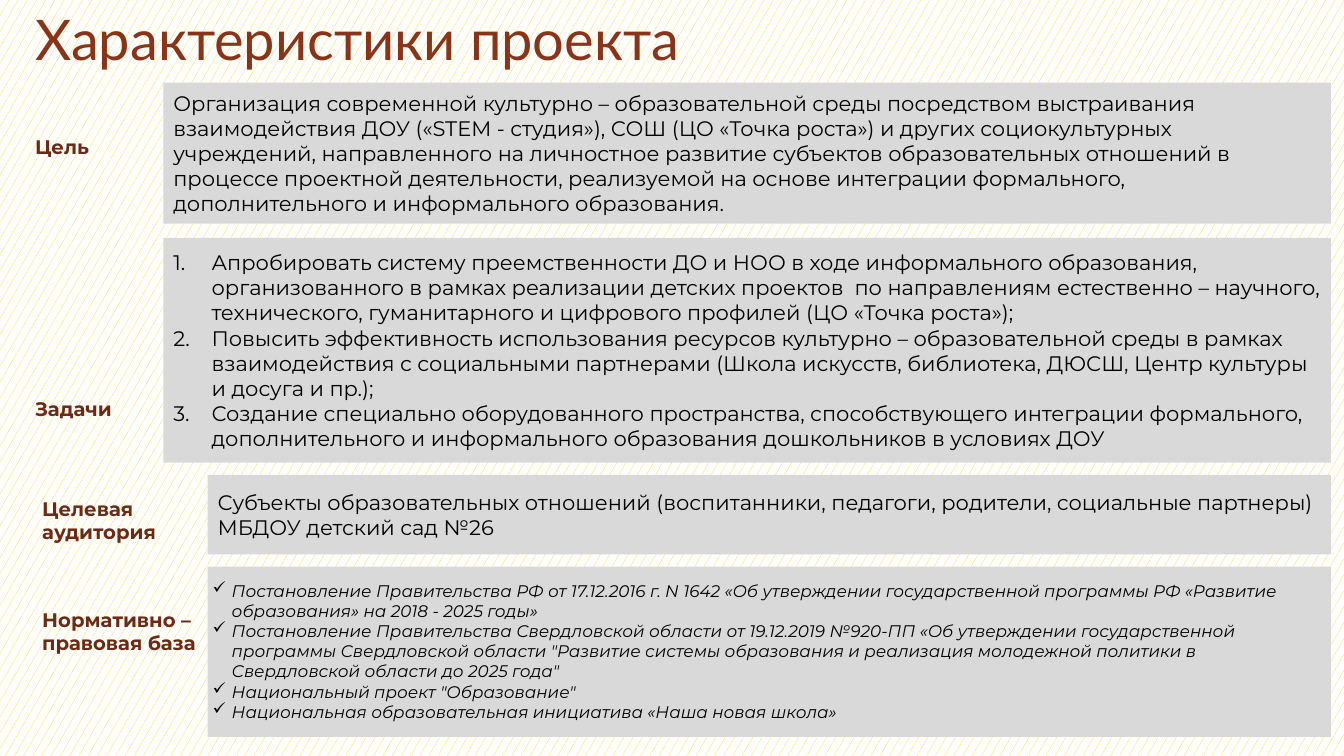
from lxml import etree
from pptx import Presentation
from pptx.dml.color import RGBColor
from pptx.enum.dml import MSO_PATTERN
from pptx.enum.shapes import MSO_SHAPE
from pptx.enum.text import MSO_ANCHOR, MSO_AUTO_SIZE, PP_ALIGN
from pptx.oxml.ns import qn
from pptx.util import Inches, Pt

TITLE = "Характеристики проекта"
GOAL = [
    "Организация современной культурно – образовательной среды посредством выстраивания "
    "взаимодействия ДОУ («STEM - студия»), СОШ (ЦО «Точка роста») и других социокультурных "
    "учреждений, направленного на личностное развитие субъектов образовательных отношений "
    "в процессе проектной деятельности, реализуемой на основе интеграции формального,  "
    "дополнительного и информального образования.",
]
TASKS = [
    "Апробировать систему преемственности ДО и НОО в ходе информального образования, "
    "организованного в рамках реализации детских проектов  по направлениям естественно – "
    "научного, технического, гуманитарного и цифрового профилей (ЦО «Точка роста»);",
    "Повысить эффективность использования ресурсов культурно – образовательной среды в рамках "
    "взаимодействия с социальными партнерами (Школа искусств, библиотека, ДЮСШ, Центр культуры "
    "и досуга и пр.);",
    "Создание специально оборудованного пространства, способствующего интеграции формального, "
    "дополнительного и информального образования дошкольников в условиях ДОУ",
]
AUDIENCE = [
    "Субъекты образовательных отношений (воспитанники, педагоги, родители, социальные партнеры) "
    "МБДОУ детский сад №26",
]
LEGAL_BASE = [
    "Постановление Правительства РФ от 17.12.2016 г. N 1642 «Об утверждении государственной "
    "программы РФ «Развитие образования» на 2018 - 2025 годы»",
    "Постановление Правительства Свердловской области от 19.12.2019 №920-ПП «Об утверждении "
    "государственной программы Свердловской области \"Развитие системы образования и реализация "
    "молодежной политики в Свердловской области до 2025 года\"",
    "Национальный проект \"Образование\"",
    "Национальная образовательная инициатива «Наша новая школа»",
]
SECTIONS = [
    ("Цель", (0.25, 1.29, 1.54, 0.68), GOAL, (1.62, 0.82, 1.4), None),
    ("Задачи", (0.25, 3.89, 1.54, 1.39), TASKS, (1.62, 2.36, 2.23), "number"),
    ("Целевая аудитория", (0.32, 4.88, 1.51, 0.49), AUDIENCE, (2.06, 4.71, 0.79), None),
    ("Нормативно – правовая база", (0.32, 5.98, 1.74, 1.23), [], (2.06, 5.62, 1.69), None),
]
LEGAL_BOX = (2.01, 5.71, 10.85, 1.51)
PANEL_RIGHT = 13.2

HEADING = RGBColor(0x89, 0x34, 0x19)
LABEL = RGBColor(0x6C, 0x29, 0x14)
PANEL = RGBColor(0xD9, 0xD9, 0xD9)
BLACK = RGBColor(0, 0, 0)
WHITE = RGBColor(255, 255, 255)
YELLOW = RGBColor(0xFF, 0xCA, 0x08)
BULLETS = {
    "number": (0.38, "a:buAutoNum", {"type": "arabicPeriod"}),
    "check": (0.19, "a:buChar", {"char": "✓"}),
}


def add_bullet(paragraph, style):
    indent, tag, attributes = BULLETS[style]
    properties = paragraph._p.get_or_add_pPr()
    properties.set("marL", str(Inches(indent)))
    properties.set("indent", str(-Inches(indent)))
    etree.SubElement(properties, qn(tag), attributes)


def write(frame, texts, size, color, bullet=None, bold=False, italic=False, after=0):
    frame.word_wrap = True
    for index, text in enumerate(texts):
        paragraph = frame.paragraphs[0] if index == 0 else frame.add_paragraph()
        paragraph.text = text
        paragraph.alignment = PP_ALIGN.LEFT
        paragraph.space_after = Pt(after)
        if bullet:
            add_bullet(paragraph, bullet)
        for run in paragraph.runs:
            run.font.name = "Montserrat"
            run.font.size = Pt(size)
            run.font.bold = bold
            run.font.italic = italic
            run.font.color.rgb = color


def add_panel(slide, left, top, height):
    panel = slide.shapes.add_shape(
        MSO_SHAPE.RECTANGLE, Inches(left), Inches(top), Inches(PANEL_RIGHT - left), Inches(height))
    panel.shadow.inherit = False
    panel.fill.solid()
    panel.fill.fore_color.rgb = PANEL
    panel.line.fill.background()
    panel.text_frame.vertical_anchor = MSO_ANCHOR.MIDDLE
    return panel


def add_title(slide):
    title = slide.shapes.title
    title.left, title.top, title.width, title.height = map(Inches, (0.25, 0.02, 7.43, 0.8))
    frame = title.text_frame
    frame.text = TITLE
    frame.auto_size = MSO_AUTO_SIZE.NONE
    frame.vertical_anchor = MSO_ANCHOR.MIDDLE
    heading = frame.paragraphs[0]
    heading.alignment = PP_ALIGN.LEFT
    heading.line_spacing = 0.9
    font = heading.runs[0].font
    font.name, font.size, font.color.rgb = "Lato", Pt(40), HEADING


def main():
    deck = Presentation()
    deck.slide_width, deck.slide_height = Inches(13.33), Inches(7.5)
    slide = deck.slides.add_slide(deck.slide_layouts[5])
    backdrop = slide.background.fill
    backdrop.patterned()
    backdrop.pattern = MSO_PATTERN.SMALL_CONFETTI
    backdrop.fore_color.rgb = YELLOW
    backdrop.back_color.rgb = WHITE
    add_title(slide)

    for name, label_box, texts, panel_box, bullet in SECTIONS:
        label = slide.shapes.add_textbox(*map(Inches, label_box))
        write(label.text_frame, [name], 14, LABEL, bold=True, after=6)
        panel = add_panel(slide, *panel_box)
        write(panel.text_frame, texts, 15, BLACK, bullet)

    legal_base = slide.shapes.add_textbox(*map(Inches, LEGAL_BOX))
    write(legal_base.text_frame, LEGAL_BASE, 12, BLACK, "check", italic=True)
    deck.save("out.pptx")


if __name__ == "__main__":
    main()
